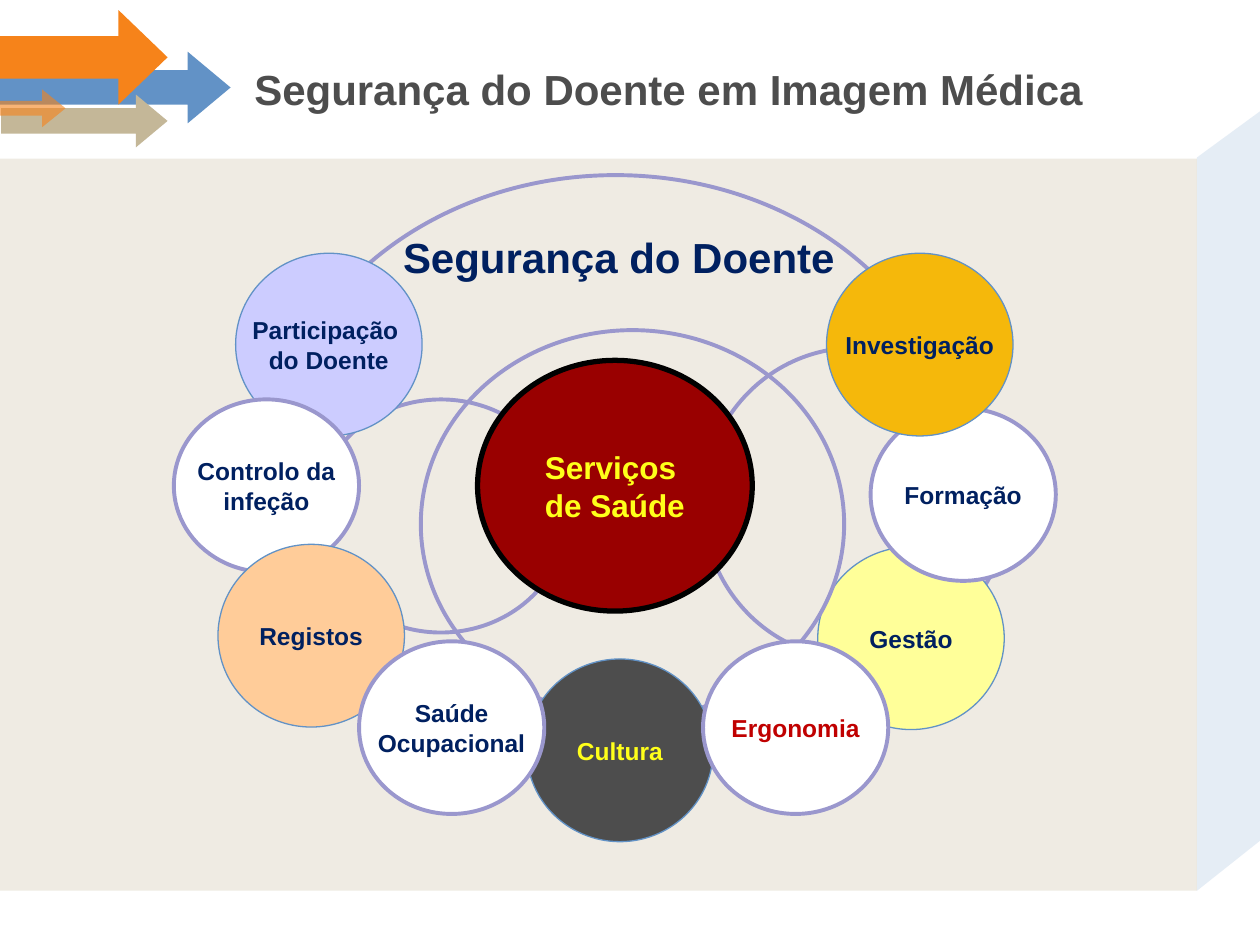
from dataclasses import dataclass

from lxml import etree
from pptx import Presentation
from pptx.dml.color import RGBColor
from pptx.enum import shapes, text
from pptx.oxml.ns import qn
from pptx.util import Inches, Pt


@dataclass(frozen=True)
class Theme:
    font: str = "Arial"
    blue: str = "6292C6"
    orange: str = "F6831A"
    sand: str = "C4B798"
    grey: str = "4D4D4D"
    lilac: str = "9A97CD"
    navy: str = "002060"
    yellow: str = "FFFF1A"
    white: str = "FFFFFF"
    red: str = "C00000"
    maroon: str = "990000"
    black: str = "000000"
    heading: int = 24
    core: int = 18
    label: int = 14


THEME = Theme()
LARGE = (1.48, 1.45)
SMALL = (1.47, 1.37)


def apply(target, values):
    for name, value in values.items():
        setattr(target, name, value)


def paint(shape, fill=None, line=None, weight=0.75, opacity=100):
    shape.shadow.inherit = False
    if fill:
        shape.fill.solid()
        shape.fill.fore_color.rgb = RGBColor.from_string(fill)
        if opacity < 100:
            color = shape.fill._xPr.find(qn("a:solidFill"))[0]
            etree.SubElement(color, qn("a:alpha"), val=str(opacity * 1000))
    else:
        shape.fill.background()
    if line:
        shape.line.color.rgb = RGBColor.from_string(line)
        shape.line.width = Pt(weight)
    else:
        shape.line.fill.background()


def write(shape, lines, size, color, align, wrap=False):
    frame = shape.text_frame
    apply(frame, {"word_wrap": wrap, "vertical_anchor": text.MSO_ANCHOR.MIDDLE})
    for index, words in enumerate(lines):
        para = frame.add_paragraph() if index else frame.paragraphs[0]
        para.alignment = align
        span = para.add_run()
        span.text = words
        apply(span.font, {"name": THEME.font, "size": Pt(size), "bold": True})
        span.font.color.rgb = RGBColor.from_string(color)


def add_preset(page, kind, place, **look):
    shape = page.shapes.add_shape(kind, *map(Inches, place))
    paint(shape, **look)
    return shape


def add_arrow(page, place, shaft, head, fill, opacity=100):
    arrow = add_preset(page, shapes.MSO_SHAPE.UP_ARROW, place, fill=fill, opacity=opacity)
    arrow.rotation = 90
    arrow.adjustments[0], arrow.adjustments[1] = shaft, head


def add_ring(page, *place):
    add_preset(page, shapes.MSO_SHAPE.OVAL, place, line=THEME.lilac, weight=2.25)


def add_bubble(page, left, top, size, lines, fill=THEME.white, color=THEME.navy,
               line=None, weight=None, points=THEME.label):
    small = size == SMALL
    bubble = add_preset(page, shapes.MSO_SHAPE.OVAL, (left, top, *size), fill=fill,
                        line=line or (THEME.lilac if small else THEME.blue),
                        weight=weight or (2.25 if small else 0.75))
    write(bubble, lines, points, color, text.PP_ALIGN.CENTER)


def add_heading(page, place, words, color, wrap=False):
    box = page.shapes.add_textbox(*map(Inches, place))
    write(box, [words], THEME.heading, color, text.PP_ALIGN.LEFT, wrap)


def add_backdrop(page):
    corners = [(9.5, 1.25), (10.06, 0.84), (10.03, 6.65), (9.5, 7.07)]
    points = [(Inches(x), Inches(y)) for x, y in corners]
    builder = page.shapes.build_freeform(*points[0])
    builder.add_line_segments(points[1:], close=True)
    paint(builder.convert_to_shape(), fill=THEME.blue, opacity=16)
    add_preset(page, shapes.MSO_SHAPE.RECTANGLE, (0, 1.26, 9.5, 5.81),
               fill=THEME.sand, opacity=27)
    add_arrow(page, (0.63, -0.22, 0.57, 1.83), 0.48, 0.6, THEME.blue)
    add_arrow(page, (0.29, -0.21, 0.75, 1.33), 0.45, 0.52, THEME.orange)
    add_arrow(page, (0.46, 0.3, 0.42, 1.32), 0.48, 0.6, THEME.sand)
    add_arrow(page, (0.11, 0.6, 0.3, 0.52), 0.39, 0.62, THEME.orange, 60)


def add_diagram(page):
    add_ring(page, 2.5, 3.17, 2, 1.85)
    add_ring(page, 2.15, 1.39, 5.47, 4.66)
    add_bubble(page, 1.87, 2.01, LARGE, ["Participação ", "do Doente"], "CCCCFF")
    add_ring(page, 5.58, 2.76, 2.42, 2.47)
    add_bubble(page, 1.38, 3.17, SMALL, ["Controlo da", "infeção"])
    add_bubble(page, 1.73, 4.32, LARGE, ["Registos"], "FFCC99")
    add_bubble(page, 6.49, 4.34, LARGE, ["Gestão"], "FFFF99")
    add_bubble(page, 6.91, 3.24, SMALL, ["Formação"])
    add_ring(page, 3.34, 2.62, 3.36, 3.08)
    add_bubble(page, 3.79, 2.86, (2.18, 1.99), ["Serviços ", "de Saúde"], THEME.maroon,
               THEME.yellow, THEME.black, 3, THEME.core)
    add_bubble(page, 4.18, 5.23, LARGE, ["Cultura"], THEME.grey, THEME.yellow)
    add_bubble(page, 2.85, 5.09, SMALL, ["Saúde", "Ocupacional"])
    add_bubble(page, 5.58, 5.09, SMALL, ["Ergonomia"], color=THEME.red)
    add_bubble(page, 6.56, 2.01, LARGE, ["Investigação"], "F5B80B")


def main():
    deck = Presentation()
    apply(deck, {"slide_width": Inches(10), "slide_height": Inches(7.5)})
    page = deck.slides.add_slide(deck.slide_layouts[6])
    add_backdrop(page)
    add_heading(page, (1.92, 0.11, 7.5, 1.18), "Segurança do Doente em Imagem Médica",
                THEME.grey, wrap=True)
    add_diagram(page)
    add_heading(page, (3.1, 1.79, 3.72, 0.5), "Segurança do Doente", THEME.navy)
    deck.save("out.pptx")


if __name__ == "__main__":
    main()
